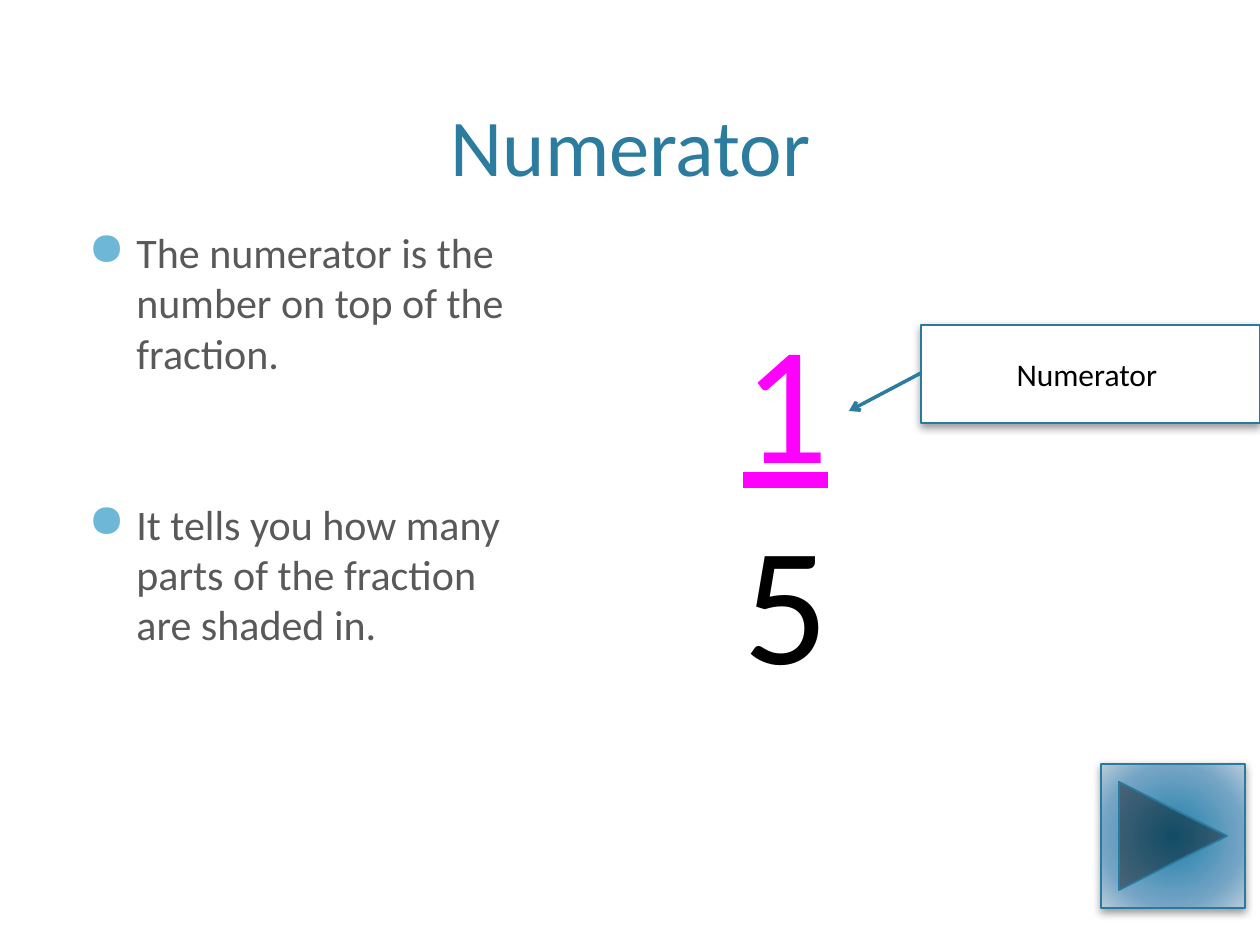
from pptx import Presentation
from pptx.dml.color import RGBColor
from pptx.enum.shapes import MSO_CONNECTOR, MSO_SHAPE
from pptx.enum.text import MSO_ANCHOR, PP_ALIGN
from pptx.oxml import parse_xml
from pptx.oxml.ns import nsdecls
from pptx.util import Emu, Pt

PX = 914400 / 126
FONT = "Calibri"
COLORS = {
    "title": "2C7C9F",
    "body": "595959",
    "bullet": "6FB7D7",
    "outline": "287A9E",
    "white": "FFFFFF",
    "black": "000000",
    "highlight": "FF00FF",
}
BUTTON_STOPS = [(0, "2180AA"), (69, "75A5C5"), (100, "B8CCDC")]


def px(*lengths):
    return [Emu(round(length * PX)) for length in lengths]


def rgb(name):
    return RGBColor.from_string(COLORS[name])


def drawing_xml(markup):
    """Parse markup whose root tag ends where {ns} stands."""
    return parse_xml(markup.replace("{ns}", nsdecls("a")))


def write(paragraph, text, size, color, align=PP_ALIGN.LEFT, underline=None):
    paragraph.text = text
    paragraph.alignment = align
    font = paragraph.runs[0].font
    font.name, font.size, font.underline = FONT, Pt(size), underline
    font.color.rgb = rgb(color)


def add_text_box(slide, box, anchor=MSO_ANCHOR.TOP):
    text_frame = slide.shapes.add_textbox(*px(*box)).text_frame
    text_frame.word_wrap = True
    text_frame.vertical_anchor = anchor
    return text_frame


def add_title(slide, text, box):
    text_frame = add_text_box(slide, box, MSO_ANCHOR.BOTTOM)
    write(text_frame.paragraphs[0], text, 46, "title", PP_ALIGN.CENTER)


def add_bullets(slide, texts, box, gap):
    text_frame = add_text_box(slide, box)
    for index, text in enumerate(texts):
        paragraph = text_frame.add_paragraph() if index else text_frame.paragraphs[0]
        write(paragraph, text, 24, "body")
        paragraph.space_before = Pt(gap if index else 0)
        properties = paragraph._p.get_or_add_pPr()
        indent = px(48)[0]
        properties.set("marL", str(indent))
        properties.set("indent", str(-indent))
        for markup in (
            f'<a:buClr {{ns}}><a:srgbClr val="{COLORS["bullet"]}"/></a:buClr>',
            '<a:buSzPct {ns} val="110000"/>',
            '<a:buChar {ns} char="●"/>',
        ):
            properties.append(drawing_xml(markup))


def add_fraction(slide, numerator, denominator, box):
    text_frame = add_text_box(slide, box)
    write(text_frame.paragraphs[0], numerator, 96, "highlight", underline=True)
    write(text_frame.add_paragraph(), denominator, 96, "black")


def add_raised_shape(slide, preset, box):
    """Add an outlined white shape with a soft shadow below it."""
    shape = slide.shapes.add_shape(preset, *px(*box))
    shape.fill.solid()
    shape.fill.fore_color.rgb = rgb("white")
    shape.line.color.rgb = rgb("outline")
    shape.line.width = Pt(1)
    shape.shadow.inherit = False
    shape._element.spPr.find("{*}effectLst").append(drawing_xml(
        f'<a:outerShdw {{ns}} blurRad="{Pt(5)}" dist="{Pt(2)}" dir="5400000" rotWithShape="0">'
        f'<a:srgbClr val="{COLORS["black"]}"><a:alpha val="40000"/></a:srgbClr></a:outerShdw>'))
    return shape


def add_forward_button(slide, box):
    shape = add_raised_shape(slide, MSO_SHAPE.ACTION_BUTTON_FORWARD_OR_NEXT, box)
    stops = "".join(
        f'<a:gs pos="{percent * 1000}"><a:srgbClr val="{color}"/></a:gs>'
        for percent, color in BUTTON_STOPS)
    gradient = drawing_xml(
        f'<a:gradFill {{ns}} rotWithShape="1"><a:gsLst>{stops}</a:gsLst><a:path path="circle">'
        '<a:fillToRect l="100000" t="100000" r="100000" b="100000"/></a:path></a:gradFill>')
    properties = shape._element.spPr
    properties.replace(properties.find("{*}solidFill"), gradient)


def add_label(slide, text, box):
    shape = add_raised_shape(slide, MSO_SHAPE.RECTANGLE, box)
    shape.text_frame.vertical_anchor = MSO_ANCHOR.MIDDLE
    write(shape.text_frame.paragraphs[0], text, 18, "black", PP_ALIGN.CENTER)


def add_arrow(slide, start, end):
    arrow = slide.shapes.add_connector(MSO_CONNECTOR.STRAIGHT, *px(*start, *end))
    arrow.line.color.rgb = rgb("title")
    arrow.line.width = Pt(2)
    arrow.line._get_or_add_ln().append(drawing_xml('<a:tailEnd {ns} type="arrow"/>'))
    arrow._element.spPr.append(drawing_xml("<a:effectLst {ns}/>"))


def main():
    presentation = Presentation()
    presentation.slide_width, presentation.slide_height = px(1260, 945)
    slide = presentation.slides.add_slide(presentation.slide_layouts[6])

    add_title(slide, "Numerator", (76, 15, 1109, 184))
    add_bullets(slide, [
        "The numerator is the number on top of the fraction.",
        "It tells you how many parts of the fraction are shaded in.",
    ], (76, 220, 470, 636), gap=69)
    add_forward_button(slide, (1101, 764, 144, 144))
    add_fraction(slide, "1", "5", (731, 289, 175, 420))
    add_label(slide, "Numerator ", (921, 325, 339, 98))
    add_arrow(slide, (921, 373), (849, 411))

    presentation.save("out.pptx")


if __name__ == "__main__":
    main()
